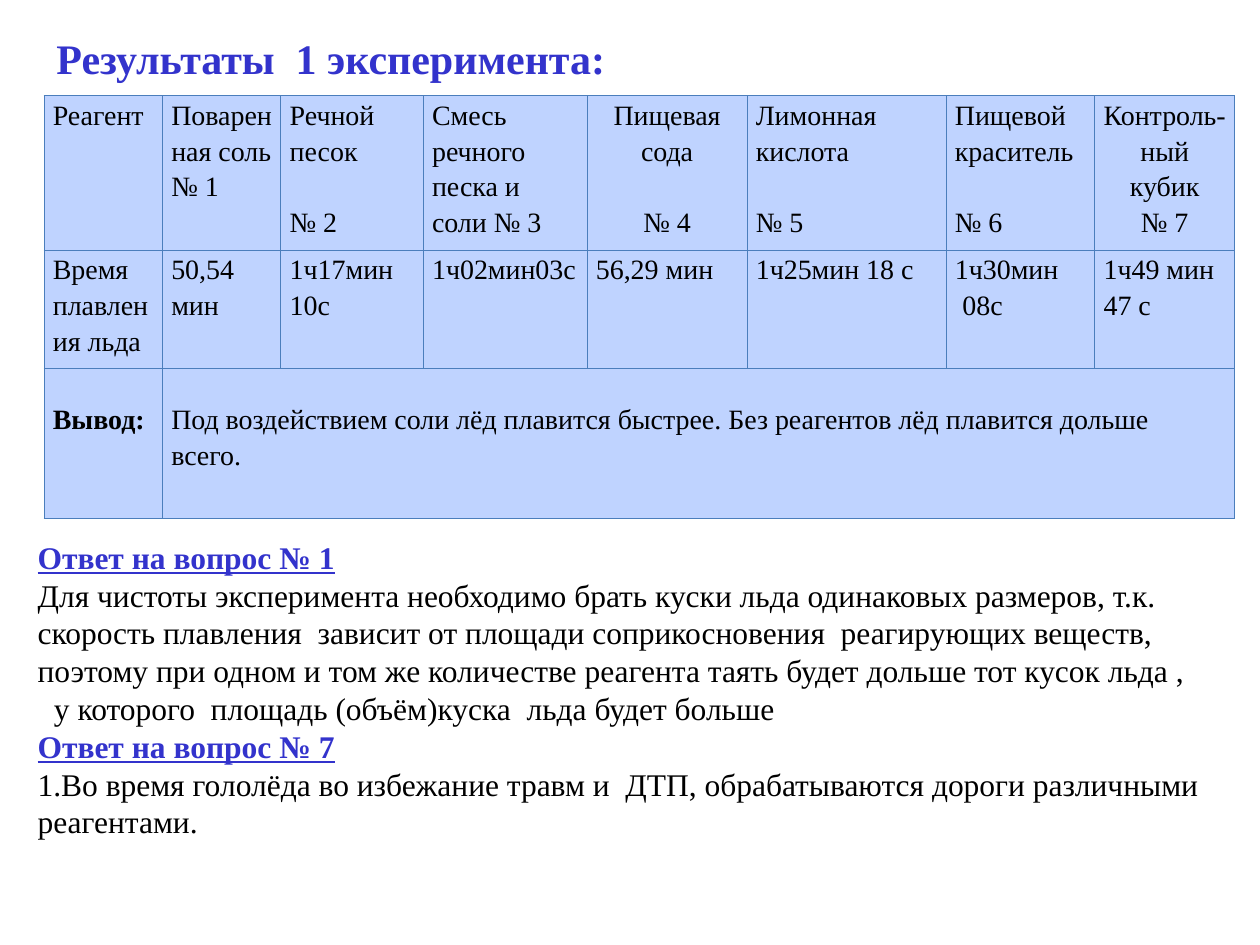
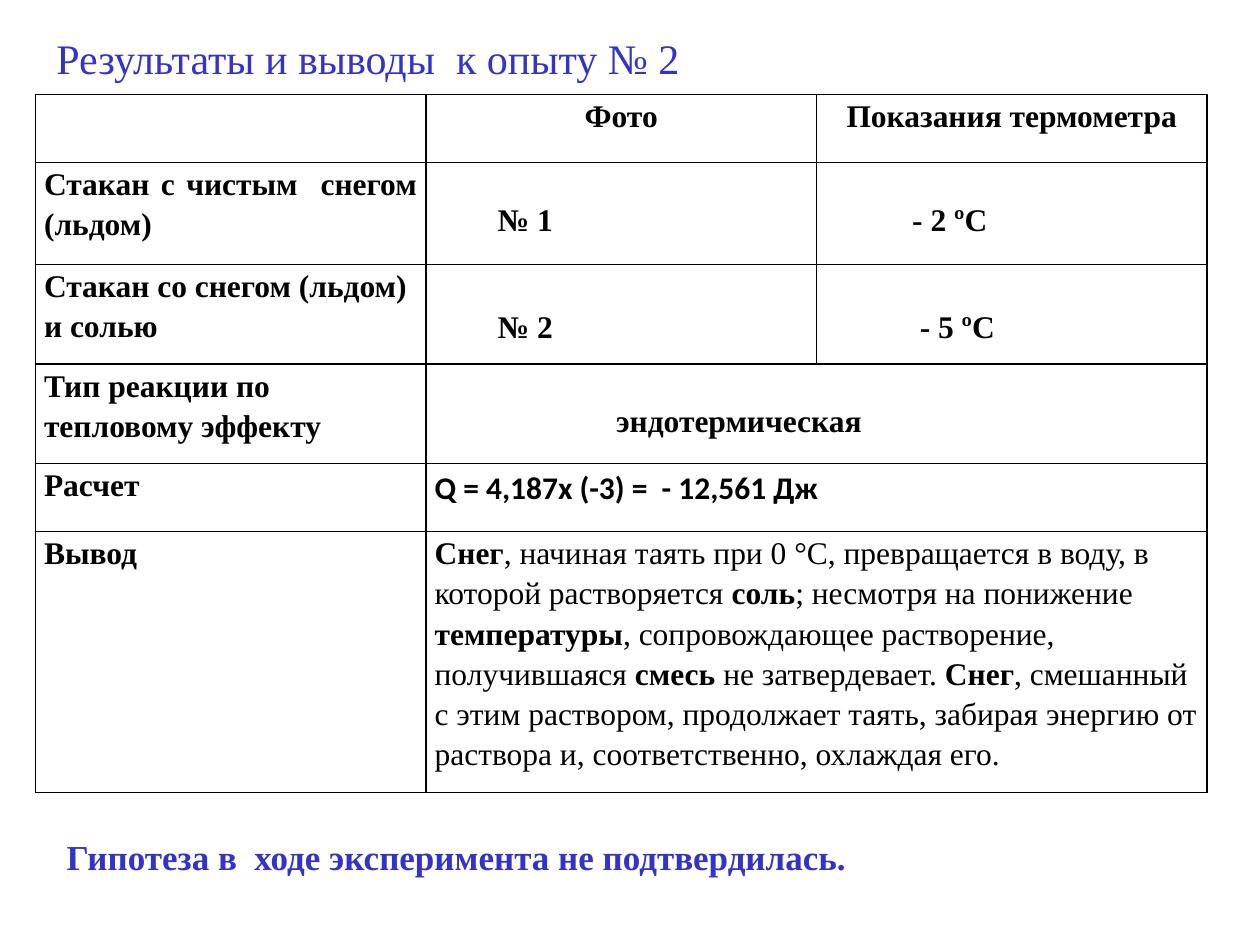
from lxml import etree
from pptx import Presentation
from pptx.dml.color import RGBColor
from pptx.enum.text import MSO_ANCHOR as Anchor, PP_ALIGN as Align
from pptx.oxml.ns import qn
from pptx.util import Inches, Pt

COLORS = {"accent": "3333CC", "text": "000000", "cell": "BFD3FF",
          "grid": "4B7EBC", "paper": "FFFFFF"}
SERIF, SANS = "Times New Roman", "Calibri"
PLAIN = {"name": SERIF, "color": "text", "bold": False}
STRONG = {**PLAIN, "bold": True}
HEADING = {**STRONG, "color": "accent"}
QUESTION = {**HEADING, "underline": True}
BLANK_LINE = 20.5  # points between a reagent and its number


def color(key):
    return RGBColor.from_string(COLORS[key])


def add_span(para, text, size, style):
    span = para.add_run()
    span.text = text
    span.font.size = Pt(size)
    for key, value in style.items():
        if key == "color":
            span.font.color.rgb = color(value)
        else:
            setattr(span.font, key, value)


def write(frame, paras, size, **settings):
    """Each paragraph is (spans, indent in inches, space before in points)."""
    for index, (spans, indent, before) in enumerate(paras):
        para = frame.paragraphs[0] if index == 0 else frame.add_paragraph()
        if indent:
            para._p.get_or_add_pPr().set("marL", str(Inches(indent)))
        if before:
            para.space_before = Pt(before)
        for key, value in settings.items():
            setattr(para, key, value)
        for text, style in spans:
            add_span(para, text, size, style)


def line(text, style=PLAIN, indent=0, before=0):
    return [(text, style)], indent, before


def add_text(page, box, paras, size, wrap=False):
    frame = page.shapes.add_textbox(*map(Inches, box)).text_frame
    frame.word_wrap = wrap
    write(frame, paras, size)


def add_title(page, text, width, style):
    add_text(page, (0.35, 0.21, width, 0.5), [line(text, style)], 24)


def set_borders(cell, key, width):
    props = cell._tc.get_or_add_tcPr()
    for place, side in enumerate(("a:lnL", "a:lnR", "a:lnT", "a:lnB")):
        border = etree.Element(qn(side), w=str(Pt(width)))
        fill = etree.SubElement(border, qn("a:solidFill"))
        etree.SubElement(fill, qn("a:srgbClr"), val=COLORS[key])
        props.insert(place, border)


def add_grid(page, left, top, widths, heights, fill, border):
    table = page.shapes.add_table(
        len(heights), len(widths), Inches(left), Inches(top),
        Inches(sum(widths)), Inches(sum(heights))).table
    table.first_row = table.horz_banding = False
    for column, width in zip(table.columns, widths):
        column.width = Inches(width)
    for row, height in zip(table.rows, heights):
        row.height = Inches(height)
        for cell in row.cells:
            cell.fill.solid()
            cell.fill.fore_color.rgb = color(fill)
            set_borders(cell, *border)
    return table


def fill_cell(cell, paras, size, align=Align.LEFT, drop=0, shift=0):
    margins = {"margin_left": 0.07 + shift, "margin_right": 0.07,
               "margin_top": drop, "margin_bottom": 0}
    for key, value in margins.items():
        setattr(cell, key, Inches(value))
    cell.vertical_anchor = Anchor.TOP
    write(cell.text_frame, paras, size, alignment=align, line_spacing=1.15)


def add_reagent_table(page, left, top):
    reagents = [  # name, gap before the number, centred, melting time
        ("Поваренная соль", 0, False, ["50,54 мин"]),
        ("Речной песок", BLANK_LINE, False, ["1ч17мин 10с"]),
        ("Смесь речного песка и соли № 3", 0, False, ["1ч02мин03с"]),
        ("Пищевая сода", BLANK_LINE, True, ["56,29 мин"]),
        ("Лимонная кислота", BLANK_LINE, False, ["1ч25мин 18 с"]),
        ("Пищевой краситель", BLANK_LINE, False, ["1ч30мин", "08с"]),
        ("Контроль-ный кубик", 0, True, ["1ч49 мин", "47 с"]),
    ]
    widths = [0.94, 0.94, 1.13, 1.3, 1.27, 1.58, 1.18, 1.11]
    table = add_grid(page, left, top, widths, [1.22, 0.94, 1.19],
                     "cell", ("grid", 0.75))
    fill_cell(table.cell(0, 0), [line("Реагент")], 16)
    fill_cell(table.cell(1, 0), [line("Время плавления льда")], 16)
    for number, (name, gap, centred, times) in enumerate(reagents, 1):
        paras = [line(name)]
        if "№" not in name:
            paras.append(line(f"№ {number}", before=gap))
        fill_cell(table.cell(0, number), paras, 16,
                  Align.CENTER if centred else Align.LEFT)
        fill_cell(table.cell(1, number),
                  [line(time, indent=0.06 if time == "08с" else 0)
                   for time in times], 16)
    table.cell(2, 1).merge(table.cell(2, 7))
    fill_cell(table.cell(2, 0), [line("Вывод:", STRONG)], 16, drop=0.25)
    fill_cell(table.cell(2, 1), [line(
        "Под воздействием соли лёд плавится быстрее. "
        "Без реагентов лёд плавится дольше всего.")], 16, drop=0.25)


def add_answers(page, box):
    add_text(page, box, [
        line("Ответ на вопрос № 1", QUESTION),
        line("Для чистоты эксперимента необходимо брать куски льда "
             "одинаковых размеров, т.к."),
        line("скорость плавления  зависит от площади соприкосновения  "
             "реагирующих веществ,"),
        line("поэтому при одном и том же количестве реагента таять будет "
             "дольше тот кусок льда ,"),
        line("у которого  площадь (объём)куска  льда будет больше",
             indent=0.13),
        line("Ответ на вопрос № 7", QUESTION),
        line("1.Во время гололёда во избежание травм и  ДТП, "
             "обрабатываются дороги различными реагентами."),
    ], 18, wrap=True)


def add_thermal_table(page, left, top):
    table = add_grid(page, left, top, [3.1] * 3,
                     [0.54, 0.81, 0.79, 0.79, 0.54, 2.07],
                     "paper", ("text", 1))
    for row in (3, 4, 5):
        table.cell(row, 1).merge(table.cell(row, 2))
    justified, centred = {"align": Align.JUSTIFY}, {"align": Align.CENTER}
    cells = [  # row, column, text, layout
        (0, 1, "Фото", centred),
        (0, 2, "Показания термометра", centred),
        (1, 0, "Стакан с чистым  снегом (льдом)", justified),
        (1, 1, "№ 1", {"drop": 0.28, "shift": 0.5}),
        (1, 2, "- 2 ºС", {"drop": 0.28, "shift": 0.69}),
        (2, 0, "Стакан со снегом (льдом) и солью", {}),
        (2, 1, "№ 2", {"drop": 0.32, "shift": 0.5}),
        (2, 2, "- 5 ºС", {"drop": 0.32, "shift": 0.75}),
        (3, 0, "Тип реакции по тепловому эффекту", {}),
        (3, 1, "эндотермическая", {"drop": 0.28, "shift": 1.44}),
        (4, 0, "Расчет", {}),
        (5, 0, "Вывод", {}),
    ]
    for row, column, text, layout in cells:
        fill_cell(table.cell(row, column), [line(text, STRONG)], 18, **layout)
    fill_cell(table.cell(4, 1), [line("Q = 4,187х (-3) =  - 12,561 Дж",
                                      {**STRONG, "name": SANS})], 18)
    conclusion = [
        ("Снег", STRONG),
        (", начиная таять при 0 °С, превращается в воду, в которой "
         "растворяется ", PLAIN),
        ("соль", STRONG),
        ("; несмотря на понижение ", PLAIN),
        ("температуры", STRONG),
        (", сопровождающее растворение, получившаяся ", PLAIN),
        ("смесь", STRONG),
        (" не затвердевает. ", PLAIN),
        ("Снег", STRONG),
        (", смешанный с этим раствором, продолжает таять, забирая энергию "
         "от раствора и, соответственно, охлаждая его.", PLAIN),
    ]
    fill_cell(table.cell(5, 1), [(conclusion, 0, 0)], 18)


def build_first_experiment(page):
    add_title(page, "Результаты  1 эксперимента:", 4.6, HEADING)
    add_reagent_table(page, 0.35, 0.76)
    add_answers(page, (0.2, 4.22, 10.55, 3.13))


def build_second_experiment(page):
    add_thermal_table(page, 0.28, 0.75)
    add_title(page, "Результаты и выводы  к опыту № 2", 5.2,
              {**HEADING, "bold": False})
    add_text(page, (0.43, 6.58, 6.44, 0.44),
             [line("Гипотеза в  ходе эксперимента не подтвердилась.",
                   HEADING)], 20)


def main():
    deck = Presentation()
    deck.slide_width, deck.slide_height = Inches(10), Inches(7.5)
    for build in (build_first_experiment, build_second_experiment):
        build(deck.slides.add_slide(deck.slide_layouts[6]))
    deck.save("out.pptx")


if __name__ == "__main__":
    main()
